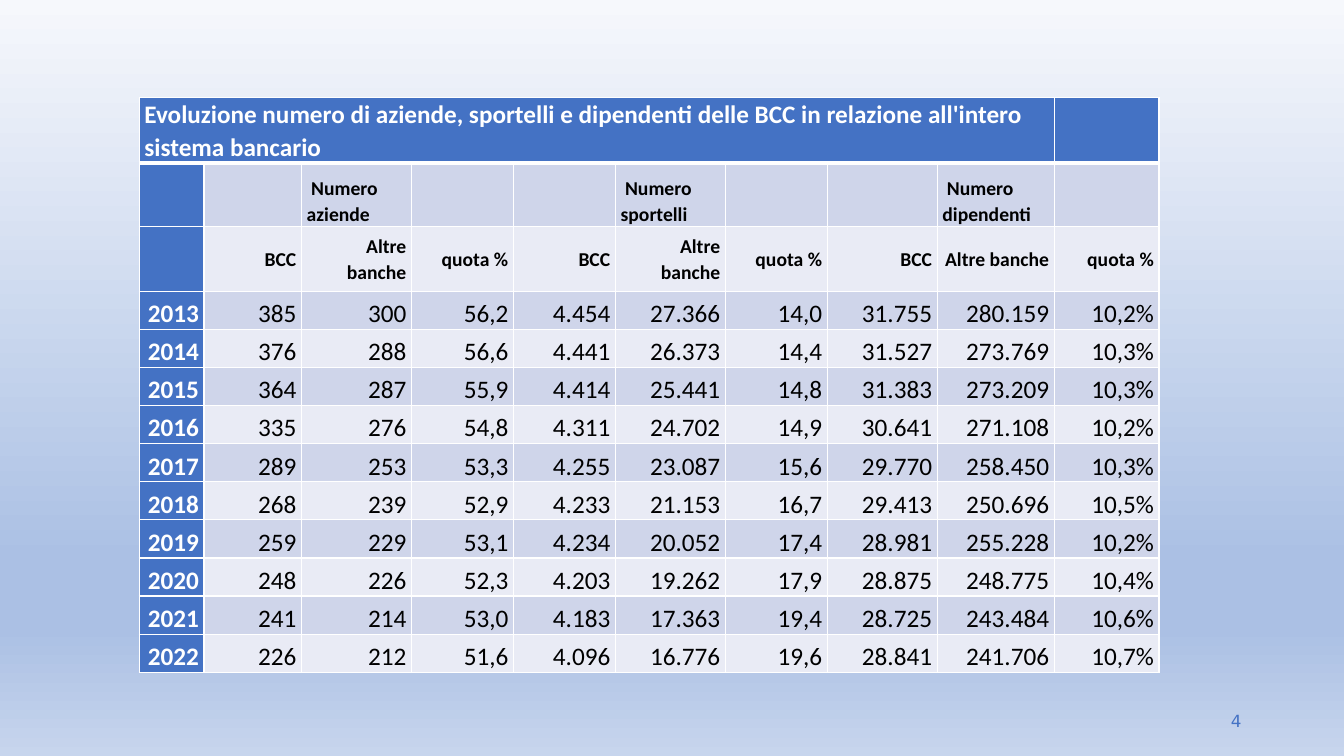
from dataclasses import dataclass

from lxml import etree
from pptx import Presentation
from pptx import util as u
from pptx.dml.color import RGBColor
from pptx.enum import text
from pptx.oxml import ns


@dataclass(frozen=True)
class Theme:
    accent: str = "4472C4"
    band_dark: str = "CFD5EA"
    band_light: str = "E9EBF5"
    white: str = "FFFFFF"
    black: str = "000000"
    backdrop: tuple = ((0, "F6F8FC"), (74, "ABC0E4"), (83, "ABC0E4"), (100, "C7D5ED"))
    font: str = "Calibri"
    number_font: str = "DejaVu Sans"
    body_size: int = 18
    head_size: int = 14
    number_size: int = 12
    thin: int = 1
    thick: int = 3


THEME = Theme()
LEFT, RIGHT = text.PP_ALIGN.LEFT, text.PP_ALIGN.RIGHT
MIDDLE, BOTTOM = text.MSO_ANCHOR.MIDDLE, text.MSO_ANCHOR.BOTTOM

TITLE = ("Evoluzione numero di aziende, sportelli e dipendenti delle BCC "
         "in relazione all'intero sistema bancario")
GROUPS = (" Numero aziende", " Numero sportelli", " Numero dipendenti")
MEASURES = ("BCC", "Altre banche", "quota %")
YEARS = (
    "2013 385 300 56,2 4.454 27.366 14,0 31.755 280.159 10,2%",
    "2014 376 288 56,6 4.441 26.373 14,4 31.527 273.769 10,3%",
    "2015 364 287 55,9 4.414 25.441 14,8 31.383 273.209 10,3%",
    "2016 335 276 54,8 4.311 24.702 14,9 30.641 271.108 10,2%",
    "2017 289 253 53,3 4.255 23.087 15,6 29.770 258.450 10,3%",
    "2018 268 239 52,9 4.233 21.153 16,7 29.413 250.696 10,5%",
    "2019 259 229 53,1 4.234 20.052 17,4 28.981 255.228 10,2%",
    "2020 248 226 52,3 4.203 19.262 17,9 28.875 248.775 10,4%",
    "2021 241 214 53,0 4.183 17.363 19,4 28.725 243.484 10,6%",
    "2022 226 212 51,6 4.096 16.776 19,6 28.841 241.706 10,7%",
)
COLUMN_WIDTHS = (1.63, 2.46, 2.77, 2.57, 2.57, 2.77, 2.57, 2.77, 2.95, 2.64)
HEADER_HEIGHTS = (1.65, 1.6, 1.63)
YEAR_HEIGHT = 0.96


def add_run(paragraph, words, size, color, font=THEME.font, bold=False):
    run = paragraph.add_run()
    run.text = words
    run.font.name = font
    run.font.size = u.Pt(size)
    run.font.bold = bold
    run.font.color.rgb = RGBColor.from_string(color)


def paint_backdrop(slide):
    """Fill the background with the vertical gradient of the theme."""
    fill = slide.background.fill
    fill.gradient()
    fill.gradient_angle = 270
    stops = slide.background._cSld.find(".//" + ns.qn("a:gsLst"))
    for old_stop in list(stops):
        stops.remove(old_stop)
    for percent, color in THEME.backdrop:
        stop = etree.SubElement(stops, ns.qn("a:gs"), pos=str(percent * 1000))
        etree.SubElement(stop, ns.qn("a:srgbClr"), val=color)


def draw_borders(cell, top, bottom):
    """Draw white cell borders; top and bottom are widths in points."""
    properties = cell._tc.get_or_add_tcPr()
    widths = {"lnL": THEME.thin, "lnR": THEME.thin, "lnT": top, "lnB": bottom}
    for side, width in widths.items():
        line = etree.SubElement(properties, ns.qn("a:" + side), w=str(u.Pt(width)))
        solid = etree.SubElement(line, ns.qn("a:solidFill"))
        etree.SubElement(solid, ns.qn("a:srgbClr"), val=THEME.white)


def style_cell(cell, row, column):
    draw_borders(cell,
                 top=THEME.thick if row == 1 else THEME.thin,
                 bottom=THEME.thick if row == 0 else THEME.thin)
    band = THEME.band_dark if row % 2 else THEME.band_light
    cell.fill.solid()
    cell.fill.fore_color.rgb = RGBColor.from_string(
        THEME.accent if row == 0 or column == 0 else band)
    cell.margin_left = cell.margin_right = u.Cm(0.13)
    cell.margin_top = cell.margin_bottom = 0
    cell.vertical_anchor = MIDDLE if row == 2 else BOTTOM


def write_cell(cell, words, row, column):
    paragraph = cell.text_frame.paragraphs[0]
    paragraph.alignment = LEFT if row < 2 else RIGHT
    paragraph.line_spacing = 1.07
    paragraph.space_after = u.Pt(8)
    add_run(paragraph, words,
            size=THEME.head_size if row in (1, 2) else THEME.body_size,
            color=THEME.white if row == 0 or column == 0 else THEME.black,
            bold=row < 3 or column == 0)


def table_rows():
    group_row = [""]
    for group in GROUPS:
        group_row += ["", group, ""]
    title_row = [TITLE] + [""] * (len(COLUMN_WIDTHS) - 1)
    measure_row = ["", *MEASURES * len(GROUPS)]
    return [title_row, group_row, measure_row, *(year.split() for year in YEARS)]


def add_bank_table(slide):
    rows = table_rows()
    heights = HEADER_HEIGHTS + (YEAR_HEIGHT,) * len(YEARS)
    table = slide.shapes.add_table(
        len(rows), len(COLUMN_WIDTHS), u.Cm(3.51), u.Cm(2.46),
        u.Cm(sum(COLUMN_WIDTHS)), u.Cm(sum(heights))).table
    table.first_row = table.horz_banding = False
    for column, width in zip(table.columns, COLUMN_WIDTHS):
        column.width = u.Cm(width)
    for row, height in zip(table.rows, heights):
        row.height = u.Cm(height)
    for r, row in enumerate(rows):
        for c, words in enumerate(row):
            cell = table.cell(r, c)
            style_cell(cell, r, c)
            if words:
                write_cell(cell, words, r, c)
    table.cell(0, 0).merge(table.cell(0, len(COLUMN_WIDTHS) - 2))


def add_page_number(slide, number):
    frame = slide.shapes.add_textbox(
        u.Cm(23.92), u.Cm(17.66), u.Cm(7.62), u.Cm(1.01)).text_frame
    frame.word_wrap = True
    frame.vertical_anchor = MIDDLE
    paragraph = frame.paragraphs[0]
    paragraph.alignment = RIGHT
    add_run(paragraph, number, THEME.number_size, THEME.accent, THEME.number_font)


def main():
    deck = Presentation()
    deck.slide_width, deck.slide_height = u.Cm(33.87), u.Cm(19.05)
    slide = deck.slides.add_slide(deck.slide_layouts[6])
    paint_backdrop(slide)
    add_page_number(slide, "4")
    add_bank_table(slide)
    deck.save("out.pptx")


if __name__ == "__main__":
    main()
